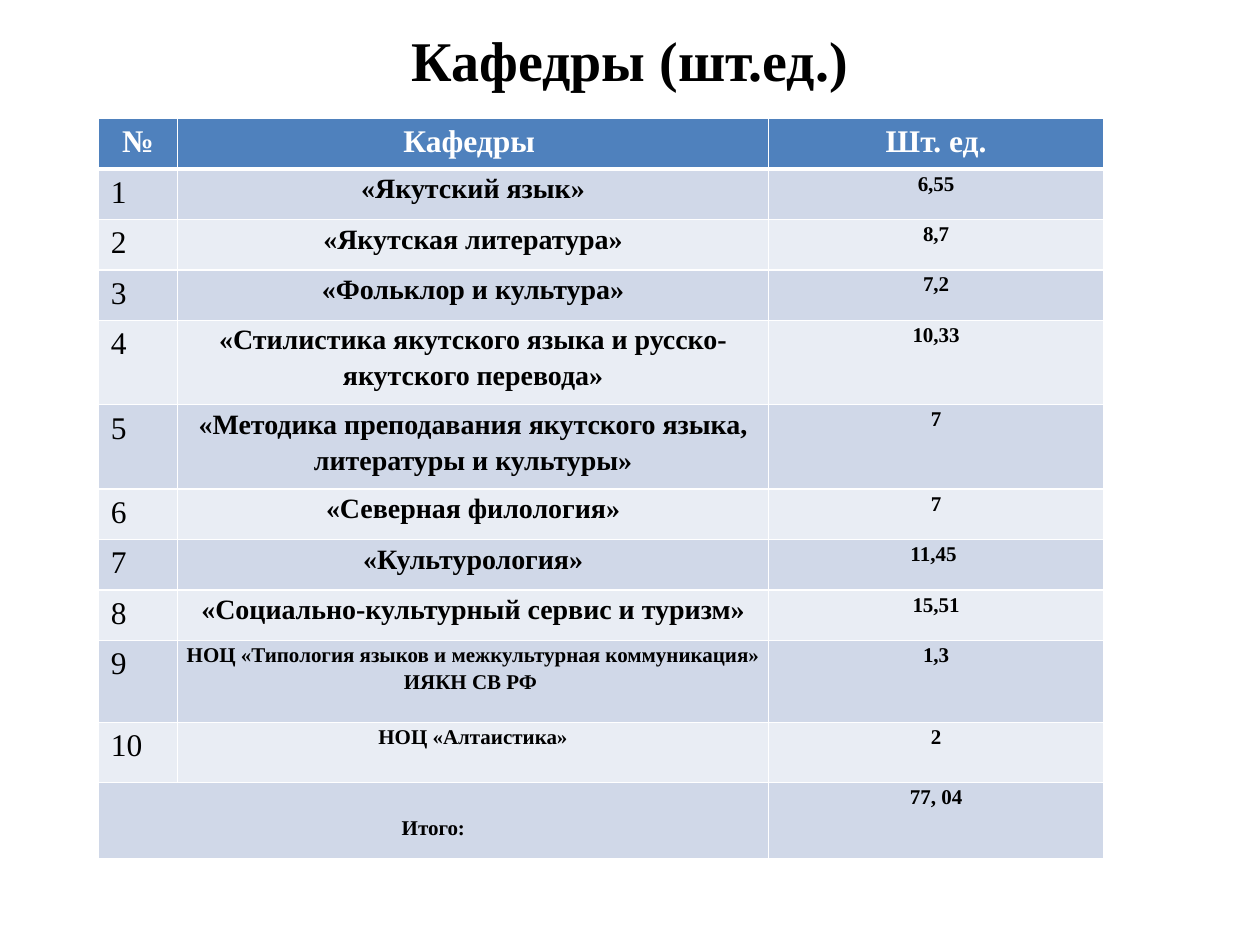
from lxml import etree
from pptx import Presentation
from pptx.dml.color import RGBColor
from pptx.enum.text import MSO_ANCHOR, PP_ALIGN
from pptx.oxml.ns import qn
from pptx.util import Inches, Pt

CENTER, LEFT = PP_ALIGN.CENTER, PP_ALIGN.LEFT
MIDDLE = MSO_ANCHOR.MIDDLE
FONT = "Times New Roman"
BLACK = RGBColor(0x00, 0x00, 0x00)
WHITE = RGBColor(0xFF, 0xFF, 0xFF)
BLUE = RGBColor(0x4F, 0x81, 0xBD)
BANDS = RGBColor(0xE9, 0xED, 0xF4), RGBColor(0xD0, 0xD8, 0xE8)

TITLE = "Кафедры (шт.ед.)"
HEADER = ["№", "Кафедры ", "Шт. ед."]
DEPARTMENTS = [
    ("«Якутский язык»", "6,55", 16, 0.4),
    ("«Якутская литература»", "8,7", 16, 0.4),
    ("«Фольклор и культура»", "7,2", 16, 0.4),
    ("«Стилистика якутского языка и русско-якутского перевода»", "10,33", 16, 0.67),
    ("«Методика преподавания якутского языка, литературы и культуры»", "7", 16, 0.67),
    ("«Северная филология»", "7", 16, 0.4),
    ("«Культурология»", "11,45 ", 16, 0.4),
    ("«Социально-культурный сервис и туризм»", "15,51", 16, 0.4),
    ("НОЦ «Типология языков и межкультурная коммуникация» \nИЯКН СВ РФ ", "1,3", 12, 0.65),
    ("НОЦ «Алтаистика»", "2", 12, 0.48),
]
TOTAL = ("Итого:", "77, 04")
COL_WIDTHS = [0.63, 4.69, 2.66]
ROW_HEIGHTS = [0.39] + [d[3] for d in DEPARTMENTS] + [0.6]


def write(tf, text, size=12, bold=True, color=BLACK, align=CENTER, spacing=None):
    for i, line in enumerate(text.split("\n")):
        p = tf.add_paragraph() if i else tf.paragraphs[0]
        p.alignment = align
        if spacing:
            p.line_spacing = spacing
        r = p.add_run()
        r.text = line
        r.font.name, r.font.size, r.font.bold = FONT, Pt(size), bold
        r.font.color.rgb = color


def write_body(cell, text, size=12, top=0):
    cell.margin_left = cell.margin_right = Inches(0.07)
    cell.margin_top, cell.margin_bottom = Inches(top), 0
    write(cell.text_frame, text, size=size, spacing=1.15)


def paint(cell, color, top=1, bottom=1):
    tc_pr = cell._tc.get_or_add_tcPr()
    for side, width in (("L", 1), ("R", 1), ("T", top), ("B", bottom)):
        ln = etree.SubElement(tc_pr, qn(f"a:ln{side}"), w=str(Pt(width)))
        fill = etree.SubElement(ln, qn("a:solidFill"))
        etree.SubElement(fill, qn("a:srgbClr"), val=str(WHITE))
    cell.fill.solid()
    cell.fill.fore_color.rgb = color


prs = Presentation()
prs.slide_width, prs.slide_height = Inches(10), Inches(7.5)
s = prs.slides.add_slide(prs.slide_layouts[6])

tf = s.shapes.add_textbox(Inches(0.5), 0, Inches(9), Inches(0.94)).text_frame
tf.word_wrap = True
tf.vertical_anchor = MIDDLE
write(tf, TITLE, size=32)

table = s.shapes.add_table(
    len(ROW_HEIGHTS), len(COL_WIDTHS), Inches(0.78), Inches(0.94),
    Inches(sum(COL_WIDTHS)), Inches(sum(ROW_HEIGHTS))).table
for col, width in zip(table.columns, COL_WIDTHS):
    col.width = Inches(width)
for row, height in zip(table.rows, ROW_HEIGHTS):
    row.height = Inches(height)

for i, row in enumerate(table.rows):
    for cell in row.cells:
        paint(cell, BANDS[i % 2] if i else BLUE,
              top=3 if i == 1 else 1, bottom=1 if i else 3)

for cell, text in zip(table.rows[0].cells, HEADER):
    write(cell.text_frame, text, size=18, color=WHITE)

for i, (name, units, size, height) in enumerate(DEPARTMENTS, 1):
    write(table.cell(i, 0).text_frame, str(i), size=18, bold=False, align=LEFT)
    write_body(table.cell(i, 1), name, size=size)
    write_body(table.cell(i, 2), units)

last = len(ROW_HEIGHTS) - 1
table.cell(last, 0).merge(table.cell(last, 1))
write_body(table.cell(last, 0), TOTAL[0], top=0.24)
write_body(table.cell(last, 2), TOTAL[1])

prs.save("out.pptx")
